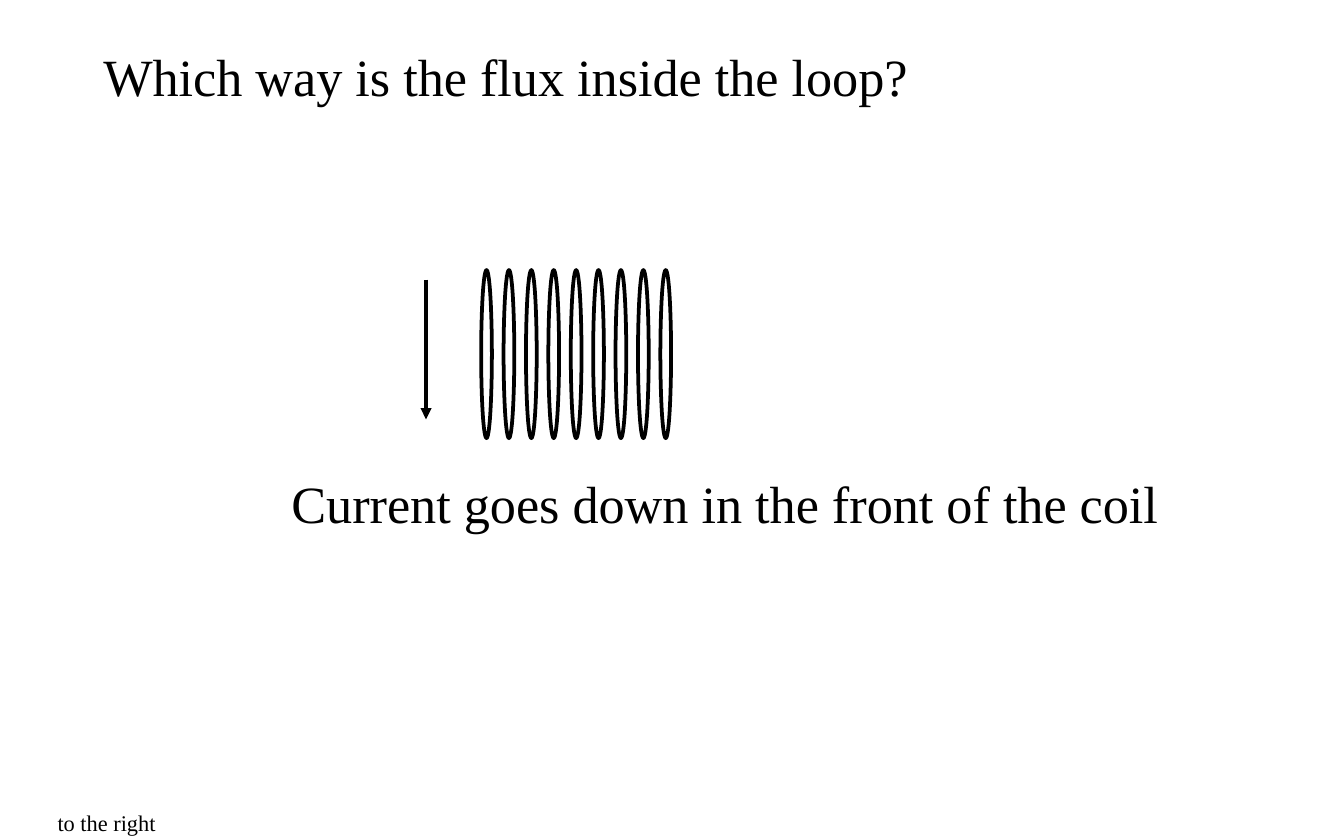
import dataclasses

import pptx
import pptx.dml.color
import pptx.enum.shapes
import pptx.enum.text
import pptx.oxml.ns
import pptx.util
from lxml import etree

Inches = pptx.util.Inches


@dataclasses.dataclass(frozen=True)
class Theme:
    ink: str = "000000"
    font: str = "Times New Roman"
    text_size: int = 28
    answer_size: int = 12
    line_width: int = 2


class SlideBuilder:
    def __init__(self, slide, theme):
        self.slide = slide
        self.theme = theme
        self.ink = pptx.dml.color.RGBColor.from_string(theme.ink)

    def style_line(self, line):
        line.color.rgb = self.ink
        line.width = pptx.util.Pt(self.theme.line_width)

    def text(self, wording, left, top, width, height, size):
        box = self.slide.shapes.add_textbox(
            Inches(left), Inches(top), Inches(width), Inches(height))
        frame = box.text_frame
        frame.word_wrap = False
        frame.auto_size = pptx.enum.text.MSO_AUTO_SIZE.SHAPE_TO_FIT_TEXT
        run = frame.paragraphs[0].add_run()
        run.text = wording
        font_format = {"name": self.theme.font, "size": pptx.util.Pt(size)}
        for attribute, value in font_format.items():
            setattr(run.font, attribute, value)
        run.font.color.rgb = self.ink

    def ellipse(self, left, top, width, height):
        turn = self.slide.shapes.add_shape(
            pptx.enum.shapes.MSO_SHAPE.OVAL,
            Inches(left), Inches(top), Inches(width), Inches(height))
        turn.shadow.inherit = False
        turn.fill.background()
        self.style_line(turn.line)

    def arrow(self, start, end):
        current = self.slide.shapes.add_connector(
            pptx.enum.shapes.MSO_CONNECTOR.STRAIGHT,
            *(Inches(value) for value in (*start, *end)))
        self.style_line(current.line)
        qn = pptx.oxml.ns.qn
        etree.SubElement(current.line._get_or_add_ln(), qn("a:tailEnd"), type="triangle")
        etree.SubElement(current._element.spPr, qn("a:effectLst"))


def main():
    presentation = pptx.Presentation()
    presentation.slide_width = Inches(10)
    presentation.slide_height = Inches(6.25)
    theme = Theme()
    blank_layout = presentation.slide_layouts[6]
    builder = SlideBuilder(presentation.slides.add_slide(blank_layout), theme)

    # Answer in the bottom corner
    builder.text("to the right", 0.33, 5.97, 0.94, 0.3, theme.answer_size)

    # Coil: nine evenly spaced turns
    turn_count, coil_left, turns_per_inch = 9, 3.58, 6
    for turn in range(turn_count):
        builder.ellipse(coil_left + turn / turns_per_inch, 2.01, 0.08, 1.25)

    # Direction of the current
    builder.text("Current goes down in the front of the coil",
                 2.07, 3.46, 6.72, 0.57, theme.text_size)
    builder.arrow((3.17, 2.08), (3.17, 3.12))

    # Question
    builder.text("Which way is the flux inside the loop?",
                 0.67, 0.28, 6.25, 0.57, theme.text_size)

    presentation.save("out.pptx")


if __name__ == "__main__":
    main()
